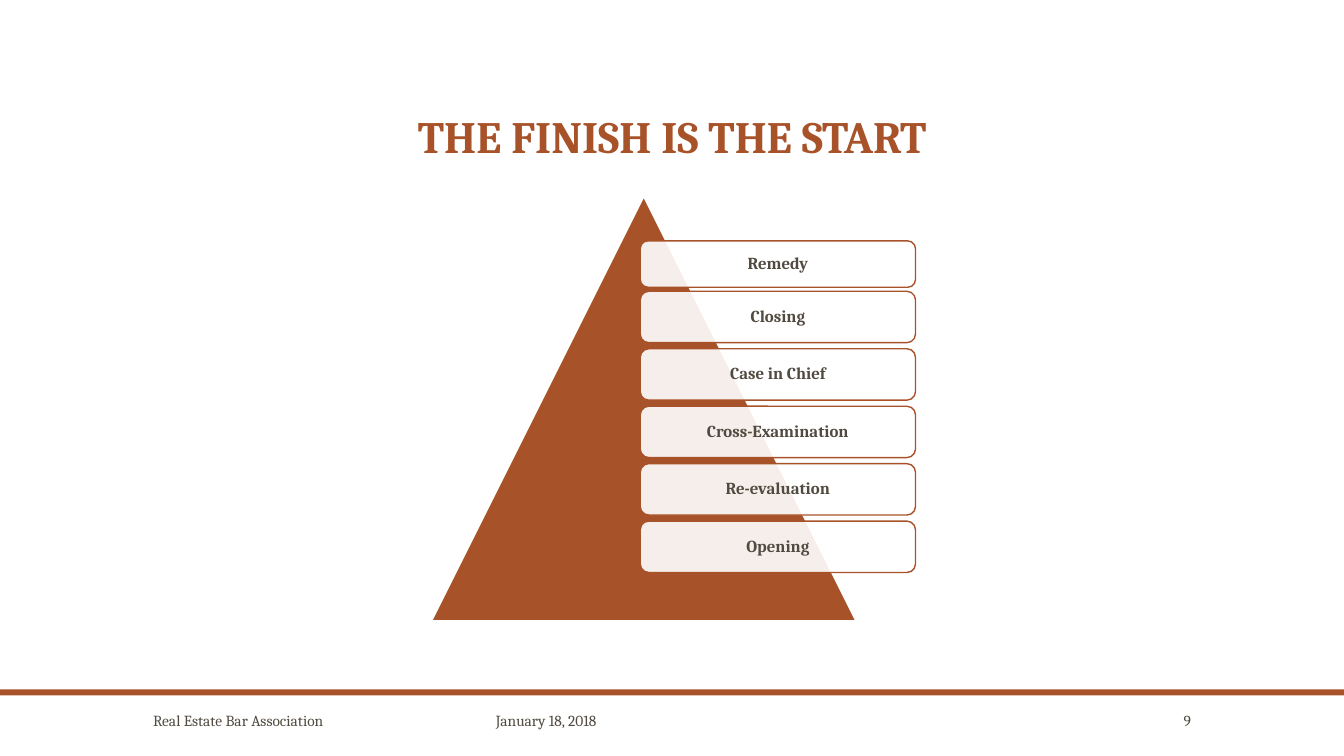
import pptx
import pptx.dml.color
import pptx.enum.shapes
import pptx.enum.text
import pptx.oxml
import pptx.oxml.ns
import pptx.util
from dataclasses import dataclass

SHAPES = pptx.enum.shapes.MSO_SHAPE
ALIGN = pptx.enum.text.PP_ALIGN
ANCHOR = pptx.enum.text.MSO_ANCHOR
WIDTH, HEIGHT = pptx.util.Inches(13.33), pptx.util.Inches(7.5)


@dataclass(frozen=True)
class Theme:
    font: str = "Cambria"
    accent: str = "A85229"
    ink: str = "514A40"
    paper: str = "FFFFFF"
    title_size: int = 32
    step_size: int = 12
    footer_size: int = 11


THEME = Theme()
STEPS = ["Remedy", "Closing", "Case in Chief", "Cross-Examination", "Re-evaluation", "Opening"]


def rgb(value):
    return pptx.dml.color.RGBColor.from_string(value)


def area(left, top, width, height):
    """Turn percentages of the slide into lengths."""
    return (int(WIDTH * left / 100), int(HEIGHT * top / 100),
            int(WIDTH * width / 100), int(HEIGHT * height / 100))


def write(shape, text, size, color=THEME.ink, bold=False, align=ALIGN.LEFT,
          anchor=ANCHOR.MIDDLE, spacing=1.0, inset=None, tab=None):
    frame = shape.text_frame
    frame.word_wrap = True
    frame.vertical_anchor = anchor
    if inset is not None:
        frame.margin_left = frame.margin_right = pptx.util.Inches(inset)
        frame.margin_top = frame.margin_bottom = pptx.util.Inches(inset)
    paragraph = frame.paragraphs[0]
    paragraph.alignment = align
    paragraph.line_spacing = spacing
    if tab is not None:
        properties = paragraph._p.get_or_add_pPr()
        tabs = pptx.oxml.parse_xml(
            f'<a:tabLst {pptx.oxml.ns.nsdecls("a")}>'
            f'<a:tab pos="{int(WIDTH * tab / 100)}" algn="l"/></a:tabLst>')
        properties.append(tabs)
    run = paragraph.add_run()
    run.text = text
    run.font.name = THEME.font
    run.font.size = pptx.util.Pt(size)
    run.font.bold = bold
    run.font.color.rgb = rgb(color)


def add_label(slide, box, text, size, **text_format):
    write(slide.shapes.add_textbox(*area(*box)), text, size, **text_format)


def add_block(slide, kind, box, fill, line=None, opacity=100):
    shape = slide.shapes.add_shape(kind, *area(*box))
    shape.shadow.inherit = False
    shape.fill.solid()
    shape.fill.fore_color.rgb = rgb(fill)
    if opacity < 100:
        color = shape.fill._xPr.find(".//" + pptx.oxml.ns.qn("a:srgbClr"))
        color.append(pptx.oxml.parse_xml(
            f'<a:alpha {pptx.oxml.ns.nsdecls("a")} val="{opacity * 1000}"/>'))
    if line:
        shape.line.color.rgb = rgb(line)
        shape.line.width = pptx.util.Pt(1)
    else:
        shape.line.fill.background()
    return shape


def add_step(slide, index, text):
    # Equal steps; the first is a little lower in height and closer to the second
    top, height = (38.53 + 7.6 * (index - 1), 6.8) if index else (31.87, 6.13)
    step = add_block(slide, SHAPES.ROUNDED_RECTANGLE, (47.64, top, 20.48, height),
                     THEME.paper, line=THEME.accent, opacity=90)
    write(step, text, THEME.step_size, bold=True, align=ALIGN.CENTER,
          spacing=0.9, inset=0.05)


def main():
    presentation = pptx.Presentation()
    presentation.slide_width, presentation.slide_height = WIDTH, HEIGHT
    slide = presentation.slides.add_slide(presentation.slide_layouts[6])

    # Footer rule and title
    add_block(slide, SHAPES.RECTANGLE, (0, 91.2, 100, 0.8), THEME.accent)
    add_label(slide, (10.65, 5.6, 78.75, 16.67), "THE FINISH IS THE START",
              THEME.title_size, color=THEME.accent, bold=True,
              align=ALIGN.CENTER, anchor=ANCHOR.BOTTOM, spacing=0.9)

    # Footer: association and date, slide number
    add_label(slide, (10.65, 93.6, 42.53, 3.47),
              "Real Estate Bar Association\tJanuary 18, 2018", THEME.footer_size, tab=25.5)
    add_label(slide, (83.65, 93.6, 5.7, 3.47), "9", THEME.footer_size, align=ALIGN.RIGHT)

    # Pyramid with its steps
    add_block(slide, SHAPES.ISOSCELES_TRIANGLE, (32.11, 26, 31.58, 56.13),
              THEME.accent, line=THEME.paper)
    for index, text in enumerate(STEPS):
        add_step(slide, index, text)

    presentation.save("out.pptx")


if __name__ == "__main__":
    main()
